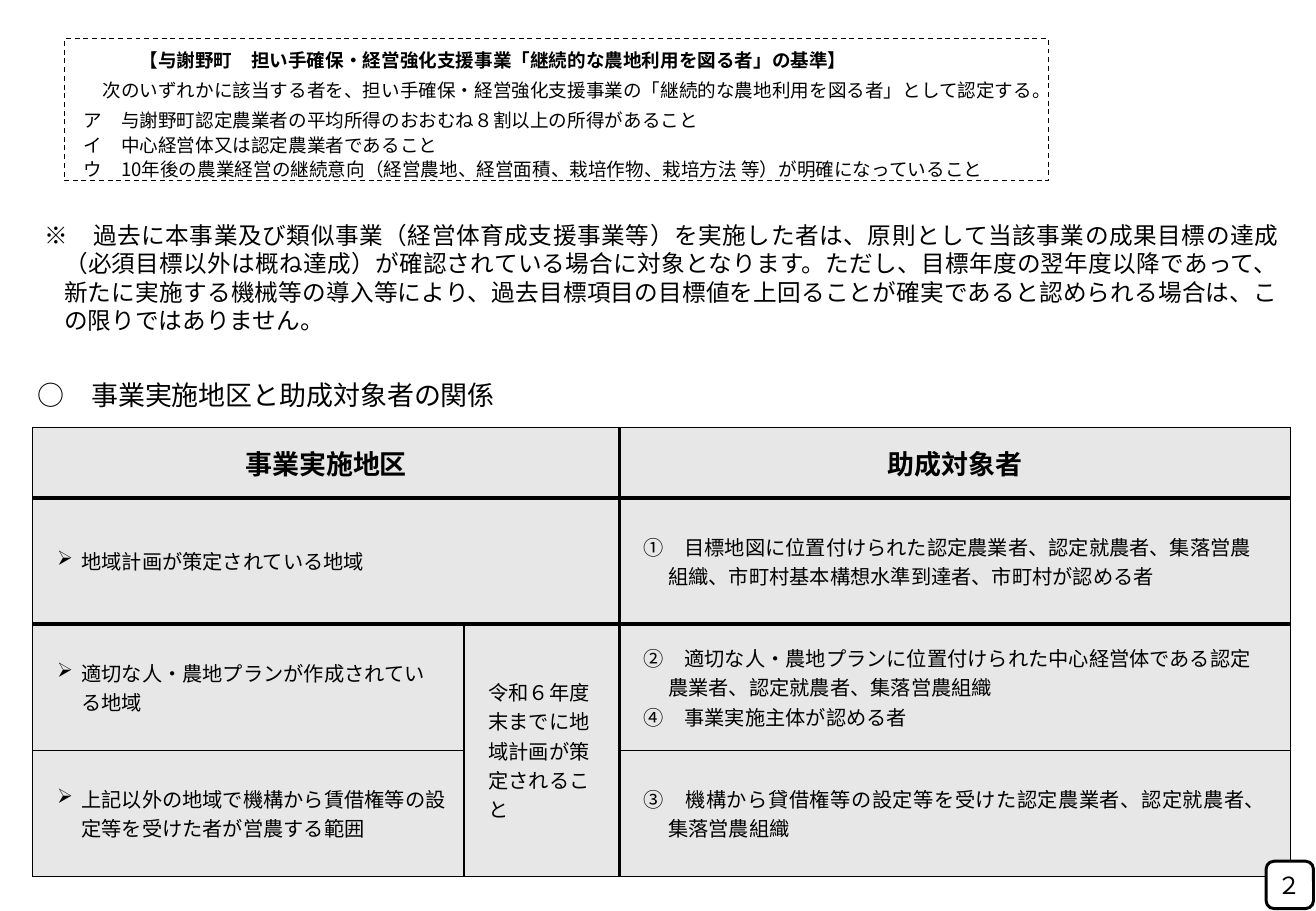
import lxml.etree
import pptx
import pptx.dml.color
import pptx.enum.dml
import pptx.enum.shapes
import pptx.enum.text
import pptx.oxml.ns
import pptx.util

Pt = pptx.util.Pt
qn = pptx.oxml.ns.qn
ALIGN = pptx.enum.text.PP_ALIGN
ANCHOR = pptx.enum.text.MSO_ANCHOR
SHAPE = pptx.enum.shapes.MSO_SHAPE
BLACK = pptx.dml.color.RGBColor(0x00, 0x00, 0x00)
WHITE = pptx.dml.color.RGBColor(0xFF, 0xFF, 0xFF)
CELL_GRAY = pptx.dml.color.RGBColor(0xE7, 0xE7, 0xE7)
FONT = "Noto Sans CJK JP"
THIN, THICK = 1, 2.25


def para(text, **fmt):
    """Describe one paragraph: its text and its format."""
    base = dict(size=12, bold=False, align=ALIGN.LEFT, left=0, first=0,
                before=0, leading=None, bullet=None)
    return {"text": text, **base, **fmt}


def numbered(text, **fmt):
    return para(text, left=14.4, first=-14.4, **fmt)


def arrow_item(text):
    return numbered(text, bullet="➢")


class SlideBuilder:
    def __init__(self, slide):
        self.shapes = slide.shapes

    def fill_text(self, frame, paras):
        for index, spec in enumerate(paras):
            p = frame.paragraphs[0] if index == 0 else frame.add_paragraph()
            p.alignment = spec["align"]
            p.space_before = Pt(spec["before"])
            if spec["leading"]:
                p.line_spacing = Pt(spec["leading"])
            props = p._p.get_or_add_pPr()
            props.set("marL", str(Pt(spec["left"])))
            props.set("indent", str(Pt(spec["first"])))
            if spec["bullet"]:
                lxml.etree.SubElement(props, qn("a:buChar")).set("char", spec["bullet"])
            run = p.add_run()
            run.text = spec["text"]
            run.font.size = Pt(spec["size"])
            run.font.bold = spec["bold"]
            run.font.color.rgb = BLACK
            run.font.name = FONT
            east_asian = lxml.etree.SubElement(run._r.get_or_add_rPr(), qn("a:ea"))
            east_asian.set("typeface", FONT)

    def set_frame(self, frame, paras, margins, anchor=ANCHOR.TOP):
        frame.word_wrap = True
        frame.vertical_anchor = anchor
        (frame.margin_left, frame.margin_top,
         frame.margin_right, frame.margin_bottom) = map(Pt, margins)
        self.fill_text(frame, paras)

    def text(self, box, paras):
        textbox = self.shapes.add_textbox(*map(Pt, box))
        self.set_frame(textbox.text_frame, paras, (7.2, 3.6, 7.2, 3.6))

    def shape(self, kind, box, paras, margins, width, fill=None, dash=None,
              anchor=ANCHOR.TOP):
        shape = self.shapes.add_shape(kind, *map(Pt, box))
        shape.shadow.inherit = False
        if fill is None:
            shape.fill.background()
        else:
            shape.fill.solid()
            shape.fill.fore_color.rgb = fill
        shape.line.color.rgb = BLACK
        shape.line.width = Pt(width)
        if dash is not None:
            shape.line.dash_style = dash
        self.set_frame(shape.text_frame, paras, margins, anchor)

    def border(self, cell, widths):
        props = cell._tc.get_or_add_tcPr()
        for index, (side, width) in enumerate(zip("LRTB", widths)):
            line = lxml.etree.Element(qn("a:ln" + side), w=str(Pt(width)))
            solid = lxml.etree.SubElement(line, qn("a:solidFill"))
            lxml.etree.SubElement(solid, qn("a:srgbClr")).set("val", str(BLACK))
            props.insert(index, line)

    def table(self, box, columns, rows, contents, merges, thick_x, thick_y):
        frame = self.shapes.add_table(len(rows), len(columns), *map(Pt, box))
        table = frame.table
        table.first_row = table.horz_banding = False
        for column, width in zip(table.columns, columns):
            column.width = Pt(width)
        for row, height in zip(table.rows, rows):
            row.height = Pt(height)
        for start, end in merges:
            table.cell(*start).merge(table.cell(*end))
        for r in range(len(rows)):
            for c in range(len(columns)):
                cell = table.cell(r, c)
                cell.fill.solid()
                cell.fill.fore_color.rgb = CELL_GRAY
                edges = ((c, thick_x), (c + 1, thick_x), (r, thick_y), (r + 1, thick_y))
                self.border(cell, [THICK if e in thick else THIN for e, thick in edges])
        for (r, c), paras in contents.items():
            cell = table.cell(r, c)
            cell.vertical_anchor = ANCHOR.MIDDLE
            cell.margin_left = cell.margin_right = Pt(14.4)
            cell.margin_top = cell.margin_bottom = Pt(8.64)
            self.fill_text(cell.text_frame, paras)
        return table


def main():
    deck = pptx.Presentation()
    deck.slide_width, deck.slide_height = Pt(779.76), Pt(540)
    page = SlideBuilder(deck.slides.add_slide(deck.slide_layouts[6]))

    # Relation between districts and eligible farmers
    header = dict(size=16, bold=True, align=ALIGN.CENTER)
    relation = page.table(
        (19.4, 253.4, 745.2, 266.2), (255.6, 92.2, 397.4), (41.8, 74.8, 74.8, 74.8),
        {
            (0, 0): [para("事業実施地区", **header)],
            (0, 2): [para("助成対象者", **header)],
            (1, 0): [arrow_item("地域計画が策定されている地域")],
            (1, 2): [numbered("①　目標地図に位置付けられた認定農業者、認定就農者、集落営農組織、"
                              "市町村基本構想水準到達者、市町村が認める者")],
            (2, 0): [arrow_item("適切な人・農地プランが作成されている地域")],
            (2, 1): [para("令和６年度末までに地域計画が策定されること")],
            (2, 2): [numbered("②　適切な人・農地プランに位置付けられた中心経営体である"
                              "認定農業者、認定就農者、集落営農組織"),
                     numbered("④　事業実施主体が認める者")],
            (3, 0): [arrow_item("上記以外の地域で機構から賃借権等の設定等を受けた者が営農する範囲")],
            (3, 2): [numbered("③　機構から貸借権等の設定等を受けた認定農業者、認定就農者、"
                              "集落営農組織", align=ALIGN.JUSTIFY)],
        },
        merges=[((0, 0), (0, 1)), ((1, 0), (1, 1)), ((2, 1), (3, 1))],
        thick_x={2}, thick_y={1, 2})
    relation.cell(3, 0).margin_right = Pt(7.2)

    # Criteria in the dashed frame
    criterion = dict(size=11, leading=13.2)
    page.shape(SHAPE.RECTANGLE, (38.2, 23, 583.2, 84.2), [
        para("【与謝野町　担い手確保・経営強化支援事業「継続的な農地利用を図る者」の基準】",
             bold=True, left=33, **criterion),
        para("次のいずれかに該当する者を、担い手確保・経営強化支援事業の"
             "「継続的な農地利用を図る者」として認定する。", left=11, before=4.8, **criterion),
        para("ア　与謝野町認定農業者の平均所得のおおむね８割以上の所得があること",
             before=4.8, **criterion),
        para("イ　中心経営体又は認定農業者であること", before=1.2, **criterion),
        para("ウ　10年後の農業経営の継続意向（経営農地、経営面積、栽培作物、栽培方法 等）"
             "が明確になっていること", before=1.2, **criterion),
    ], (11.5, 5.8, 7.2, 0), 0.75, dash=pptx.enum.dml.MSO_LINE.DASH)

    # Section heading
    page.text((15.1, 221, 607, 26.6), [
        para("○　事業実施地区と助成対象者の関係", size=16, leading=19.2, align=ALIGN.JUSTIFY)])

    # Note on earlier participants
    page.text((19.4, 127.4, 745.2, 74.9), [
        para("※　過去に本事業及び類似事業（経営体育成支援事業等）を実施した者は、"
             "原則として当該事業の成果目標の達成（必須目標以外は概ね達成）が確認されている場合に"
             "対象となります。ただし、目標年度の翌年度以降であって、新たに実施する機械等の導入等により、"
             "過去目標項目の目標値を上回ることが確実であると認められる場合は、この限りではありません。",
             size=14, leading=16.8, align=ALIGN.JUSTIFY, left=11.5, first=-11.5)])

    # Page number
    page.shape(SHAPE.ROUNDED_RECTANGLE, (750.2, 510.5, 28.1, 28.1),
               [para("２", size=14, align=ALIGN.CENTER)], (0, 0, 0, 0), 1.75,
               fill=WHITE, anchor=ANCHOR.MIDDLE)

    deck.save("out.pptx")


if __name__ == "__main__":
    main()
